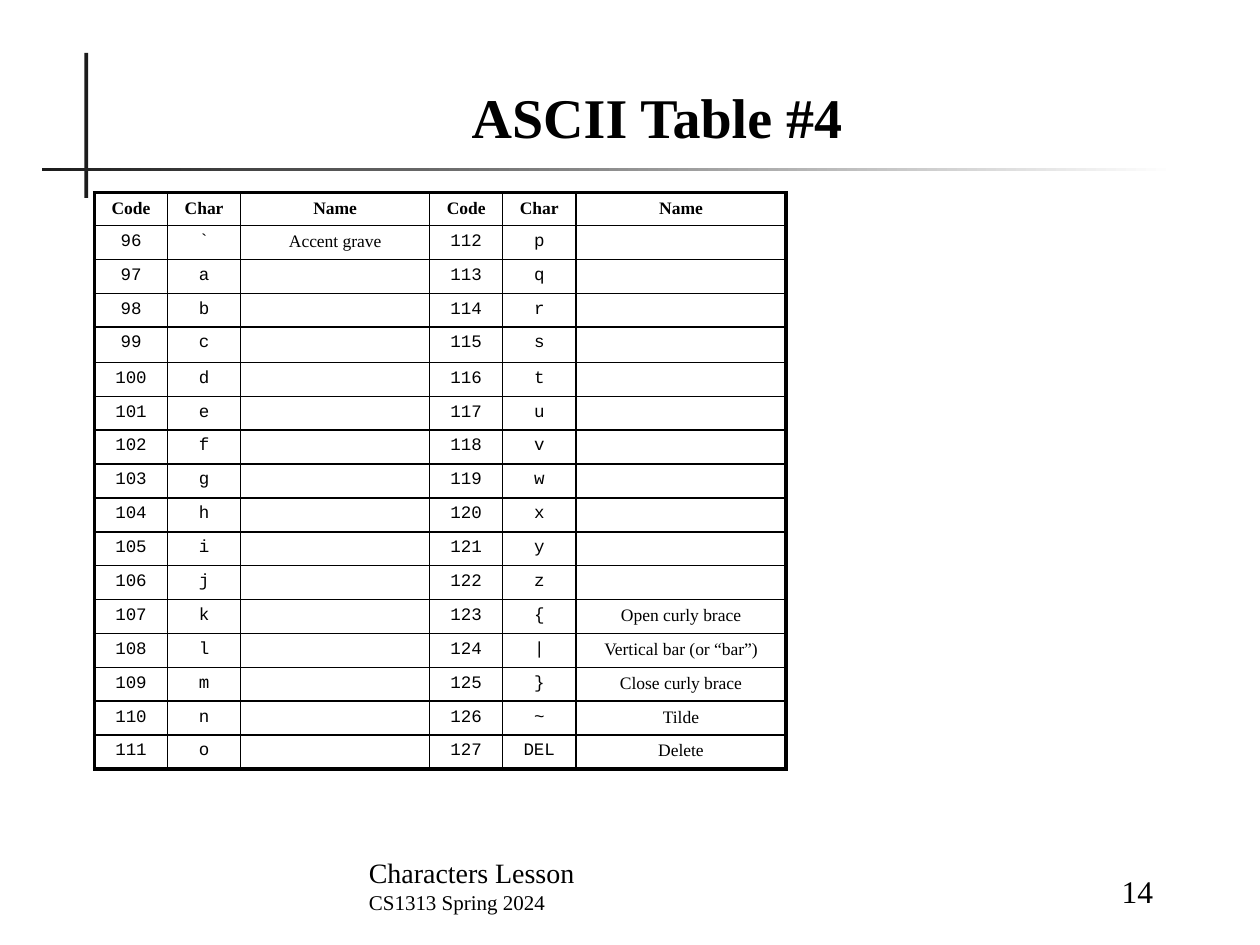
from dataclasses import dataclass

from lxml.etree import SubElement
from pptx import Presentation
from pptx.dml.color import RGBColor
from pptx.enum.shapes import MSO_SHAPE as Shape
from pptx.enum.text import MSO_ANCHOR as Anchor, MSO_AUTO_SIZE as AutoSize, PP_ALIGN as Align
from pptx.oxml.ns import qn
from pptx.util import Inches, Pt

COLORS = {"ink": "000000", "rule": "1C1C1C", "paper": "FFFFFF"}
SERIF, MONO = "Times New Roman", "Courier New"
HEADINGS = ["Code", "Char", "Name"] * 2
COLUMN_WIDTHS = [0.58, 0.58, 1.5, 0.58, 0.58, 1.67]
FIRST_CODE, CODES_PER_COLUMN = 96, 16
ROW_HEIGHT, TALL_ROW, TALL_ROW_HEIGHT = 0.26, 4, 0.28
THIN, THICK = 1, 2.25
NAMES = {
    96: "Accent grave",
    123: "Open curly brace",
    124: "Vertical bar (or “bar”)",
    125: "Close curly brace",
    126: "Tilde",
    127: "Delete",
}


@dataclass
class Frame:
    left: float
    top: float
    width: float
    height: float

    def lengths(self) -> list:
        return [Inches(value) for value in (self.left, self.top, self.width, self.height)]


@dataclass
class Line:
    text: str
    size: float
    font: str = SERIF
    bold: bool = False
    align: Align = Align.LEFT


def color(name: str) -> RGBColor:
    return RGBColor.from_string(COLORS[name])


def write_line(para, line: Line) -> None:
    para.text = line.text
    para.alignment = line.align
    for span in para.runs:
        span.font.name = line.font
        span.font.size = Pt(line.size)
        span.font.bold = line.bold
        span.font.color.rgb = color("ink")


def write_box(box, lines: list[Line]) -> None:
    frame = box.text_frame
    frame.word_wrap = True
    frame.auto_size = AutoSize.NONE
    frame.vertical_anchor = Anchor.BOTTOM
    for index, line in enumerate(lines):
        write_line(frame.add_paragraph() if index else frame.paragraphs[0], line)


def add_rule(page, frame: Frame, fades: bool = False) -> None:
    rule = page.shapes.add_shape(Shape.RECTANGLE, *frame.lengths())
    rule.shadow.inherit = False
    rule.line.fill.background()
    if fades:
        rule.fill.gradient()
        rule.fill.gradient_angle = 0
        for stop, name in zip(rule.fill.gradient_stops, ("rule", "paper")):
            stop.color.rgb = color(name)
    else:
        rule.fill.solid()
        rule.fill.fore_color.rgb = color("rule")


def add_text(page, frame: Frame, lines: list[Line]) -> None:
    write_box(page.shapes.add_textbox(*frame.lengths()), lines)


def set_borders(cell, widths: dict[str, float]) -> None:
    properties = cell._tc.get_or_add_tcPr()
    for side, width in widths.items():
        border = SubElement(properties, qn(f"a:ln{side}"), w=str(int(Pt(width))))
        fill = SubElement(border, qn("a:solidFill"))
        SubElement(fill, qn("a:srgbClr"), val=COLORS["ink"])


def code_cells(code: int) -> list[Line]:
    char = "DEL" if code == 127 else chr(code)
    return [Line(str(code), 10, MONO), Line(char, 10, MONO), Line(NAMES.get(code, ""), 10)]


def add_ascii_table(page, frame: Frame) -> None:
    rows = [[Line(heading, 10, bold=True) for heading in HEADINGS]]
    for code in range(FIRST_CODE, FIRST_CODE + CODES_PER_COLUMN):
        rows.append(code_cells(code) + code_cells(code + CODES_PER_COLUMN))
    last_row, last_column = len(rows) - 1, len(HEADINGS) - 1
    table = page.shapes.add_table(len(rows), len(HEADINGS), *frame.lengths()).table
    table.first_row = table.horz_banding = False
    for column, width in zip(table.columns, COLUMN_WIDTHS):
        column.width = Inches(width)
    for row_index, lines in enumerate(rows):
        height = TALL_ROW_HEIGHT if row_index == TALL_ROW else ROW_HEIGHT
        table.rows[row_index].height = Inches(height)
        for column_index, line in enumerate(lines):
            cell = table.cell(row_index, column_index)
            line.align = Align.CENTER
            para = cell.text_frame.paragraphs[0]
            write_line(para, line)
            if not line.text:
                SubElement(para._p, qn("a:endParaRPr"), sz=str(line.size * 100))
            set_borders(cell, {
                "L": THICK if column_index == 0 else THIN,
                "R": THICK if column_index == last_column else THIN,
                "T": THICK if row_index == 0 else THIN,
                "B": THICK if row_index == last_row else THIN,
            })
            cell.fill.background()


def main() -> None:
    deck = Presentation()
    deck.slide_width, deck.slide_height = Inches(10), Inches(7.5)
    page = deck.slides.add_slide(deck.slide_layouts[5])

    title = page.shapes.title
    title.left, title.top, title.width, title.height = Frame(0.83, 0.5, 8.77, 0.74).lengths()
    write_box(title, [Line("ASCII Table #4", 32, bold=True, align=Align.CENTER)])

    add_rule(page, Frame(0.67, 0.42, 0.03, 1.15))
    add_rule(page, Frame(0.33, 1.33, 9, 0.03), fades=True)
    add_text(page, Frame(7.83, 6.77, 1.42, 0.5), [Line("14", 18, align=Align.RIGHT)])
    add_text(page, Frame(2.83, 6.81, 4.83, 0.5), [
        Line("Characters Lesson", 16),
        Line("CS1313 Spring 2024", 12),
    ])
    add_ascii_table(page, Frame(0.75, 1.53, 5.5, 4.44))
    deck.save("out.pptx")


if __name__ == "__main__":
    main()
